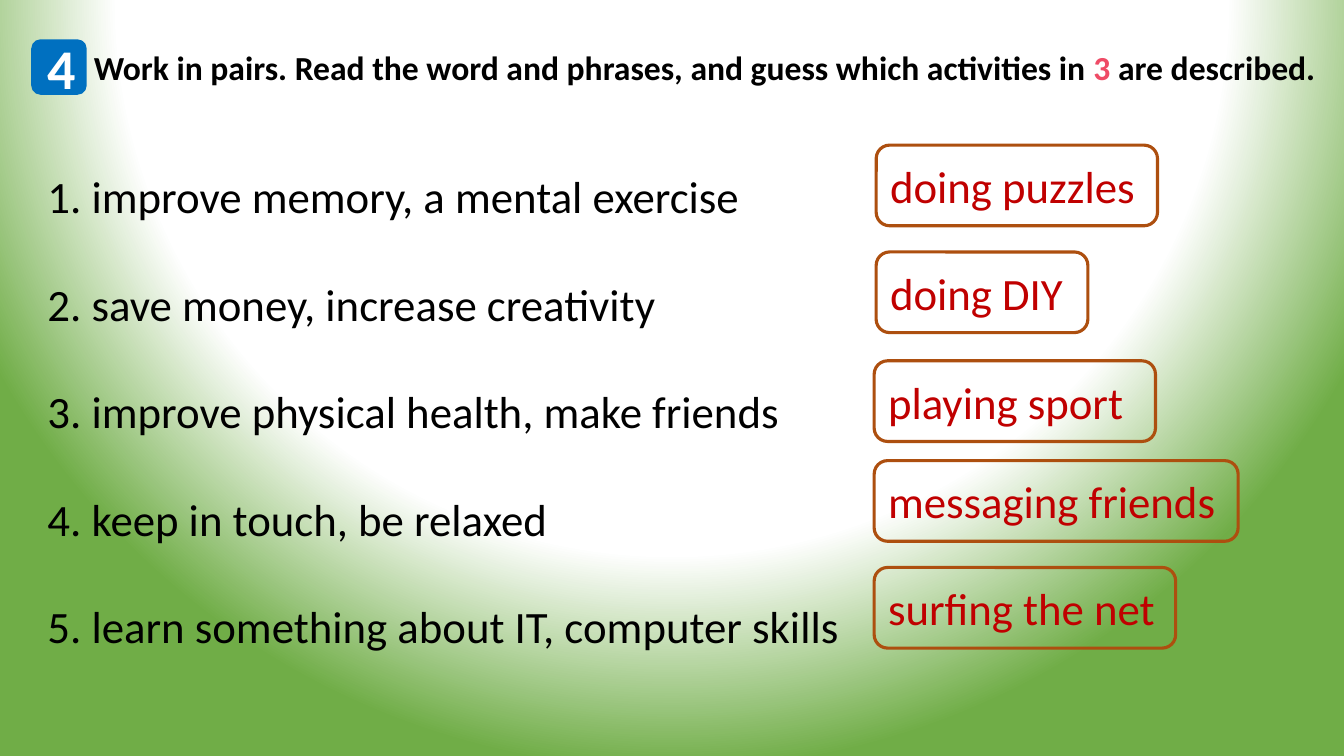
from lxml import etree
from pptx import Presentation
from pptx.dml.color import RGBColor
from pptx.enum.shapes import MSO_SHAPE
from pptx.enum.text import MSO_ANCHOR, MSO_AUTO_SIZE, PP_ALIGN
from pptx.oxml import parse_xml
from pptx.oxml.ns import nsdecls, qn
from pptx.util import Inches, Pt

ROUNDED = MSO_SHAPE.ROUNDED_RECTANGLE
TOP, MIDDLE = MSO_ANCHOR.TOP, MSO_ANCHOR.MIDDLE
LEFT, CENTER = PP_ALIGN.LEFT, PP_ALIGN.CENTER
NO_AUTOFIT = MSO_AUTO_SIZE.NONE
FONT = "Calibri"

COLORS = {
    "white": "FFFFFF",
    "black": "000000",
    "green": "70AD47",
    "blue": "0070C0",
    "coral": "EF4B66",
    "red": "C00000",
    "brown": "AD4F0F",
}

INSTRUCTION = [
    ("Work in pairs. Read the word and phrases, and guess which activities in ", "black"),
    ("3 ", "coral"),
    ("are described.", "black"),
]
CLUES = [
    "improve memory, a mental exercise",
    "save money, increase creativity",
    "improve physical health, make friends",
    "keep in touch, be relaxed",
    "learn something about IT, computer skills",
]
ANSWERS = [
    ("doing puzzles", 8.69, 1.44, 2.79),
    ("doing DIY", 8.69, 2.5, 2.1),
    ("playing sport", 8.67, 3.58, 2.79),
    ("messaging friends", 8.67, 4.57, 3.61),
    ("surfing the net", 8.67, 5.63, 2.99),
]


def rgb(color):
    return RGBColor.from_string(COLORS[color])


def write(paragraph, text, *, size, color="black", bold=False, align=LEFT, spacing=1.0):
    paragraph.alignment = align
    paragraph.line_spacing = spacing
    paragraph.space_before = Pt(0)
    run = paragraph.add_run()
    run.text = text
    run.font.name = FONT
    run.font.size = Pt(size)
    run.font.bold = bold
    run.font.color.rgb = rgb(color)


def place(shape, left, top, width, height, anchor=TOP):
    shape.left, shape.top = Inches(left), Inches(top)
    shape.width, shape.height = Inches(width), Inches(height)
    frame = shape.text_frame
    frame.word_wrap = True
    frame.auto_size = NO_AUTOFIT
    frame.vertical_anchor = anchor
    return frame


def paint_background(slide):
    slide.background.fill.gradient()
    linear = slide.element.find(".//" + qn("a:gradFill"))
    stops = "".join(
        f'<a:gs pos="{percent * 1000}"><a:srgbClr val="{COLORS[color]}"/></a:gs>'
        for percent, color in [(0, "white"), (72, "white"), (100, "green")]
    )
    radial = parse_xml(
        f'<a:gradFill {nsdecls("a")} rotWithShape="1"><a:gsLst>{stops}</a:gsLst>'
        '<a:path path="circle"><a:fillToRect l="50000" t="-80000" r="50000" b="180000"/>'
        "</a:path></a:gradFill>"
    )
    linear.getparent().replace(linear, radial)


def number(paragraph):
    properties = paragraph._p.get_or_add_pPr()
    properties.set("marL", "0")
    properties.set("indent", "0")
    etree.SubElement(properties, qn("a:buFont"), typeface="+mj-lt")
    etree.SubElement(properties, qn("a:buAutoNum"), type="arabicPeriod")


def add_instruction(title):
    frame = place(title, 0.83, 0.42, 12.34, 0.5)
    for text, color in INSTRUCTION:
        write(frame.paragraphs[0], text, size=24, color=color, bold=True)


def add_clues(body):
    frame = place(body, 0.37, 1.09, 8.3, 5.49)
    for index, clue in enumerate(CLUES):
        paragraph = frame.add_paragraph() if index else frame.paragraphs[0]
        write(paragraph, " " + clue, size=32, spacing=2.0)
        number(paragraph)


def add_rounded_box(slide, left, top, width, height):
    box = slide.shapes.add_shape(
        ROUNDED, Inches(left), Inches(top), Inches(width), Inches(height)
    )
    box.shadow.inherit = False
    return box


def add_badge(slide, digit):
    badge = add_rounded_box(slide, 0.31, 0.39, 0.55, 0.55)
    badge.fill.solid()
    badge.fill.fore_color.rgb = rgb("blue")
    badge.line.fill.background()
    label = slide.shapes.add_textbox(0, 0, 0, 0)
    frame = place(label, 0.37, 0.28, 0.43, 0.77)
    write(frame.paragraphs[0], digit, size=40, color="white", bold=True, align=CENTER)


def add_answer(slide, text, left, top, width):
    answer = add_rounded_box(slide, left, top, width, 0.8)
    answer.fill.background()
    answer.line.color.rgb = rgb("brown")
    answer.line.width = Pt(2.25)
    frame = place(answer, left, top, width, 0.8, anchor=MIDDLE)
    write(frame.paragraphs[0], text, size=32, color="red")


def main():
    deck = Presentation()
    deck.slide_width, deck.slide_height = Inches(13.33), Inches(7.5)
    slide = deck.slides.add_slide(deck.slide_layouts[1])
    paint_background(slide)
    add_instruction(slide.shapes.title)
    add_badge(slide, "4")
    add_clues(slide.placeholders[1])
    for answer in ANSWERS:
        add_answer(slide, *answer)
    deck.save("out.pptx")


if __name__ == "__main__":
    main()
